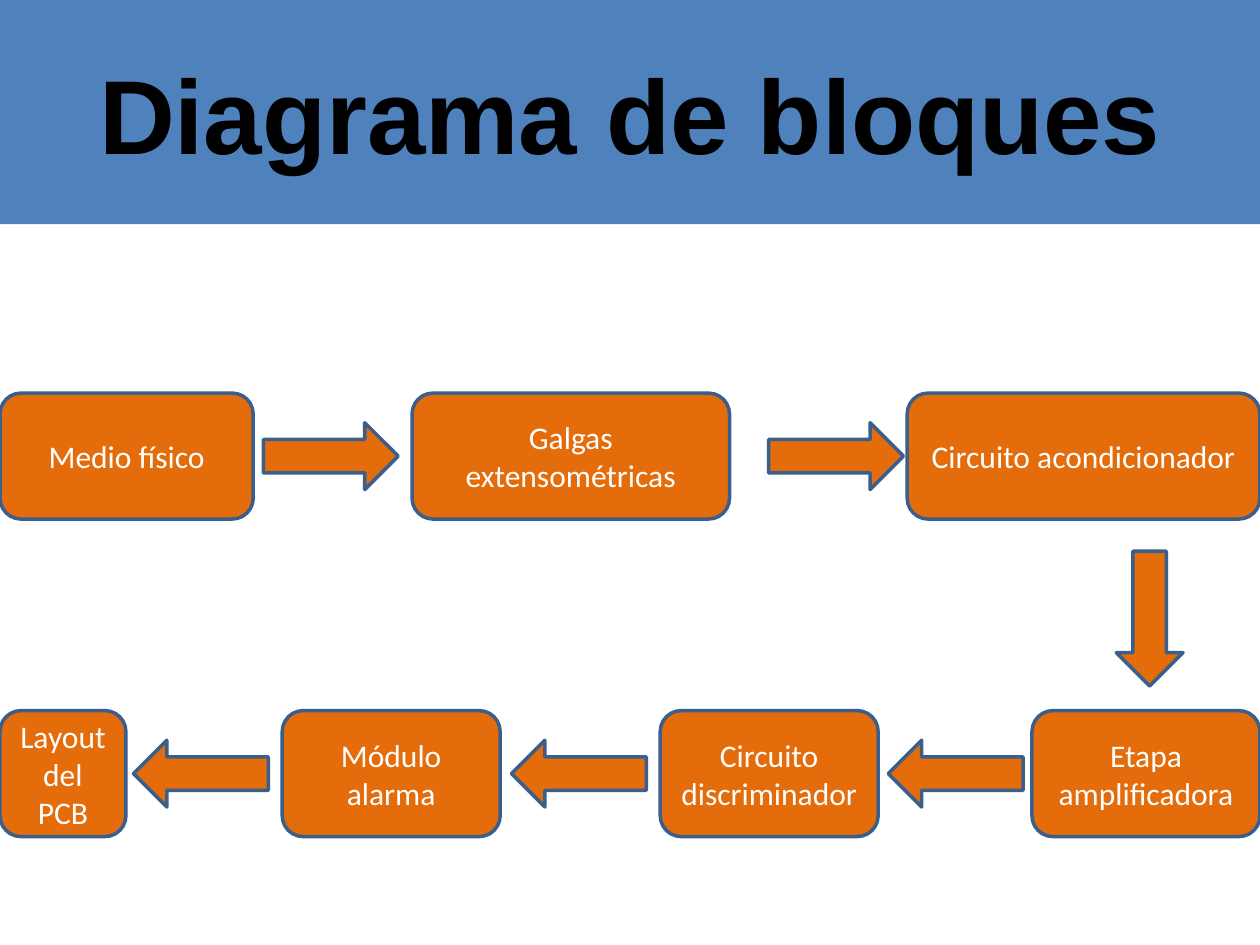
from pptx import Presentation
from pptx.dml.color import RGBColor
from pptx.enum.shapes import MSO_SHAPE
from pptx.enum.text import MSO_ANCHOR, MSO_AUTO_SIZE, PP_ALIGN
from pptx.util import Inches, Pt


def paint(item, color):
    """Set a solid colour on a fill."""
    item.solid()
    item.fore_color.rgb = RGBColor.from_string(color)


def block(kind, left, top, width, height):
    """Add an orange shape with a blue outline."""
    shape = slide.shapes.add_shape(
        kind, Inches(left), Inches(top), Inches(width), Inches(height))
    shape.shadow.inherit = False
    paint(shape.fill, "E46C0A")
    paint(shape.line.fill, "3A5F8C")
    shape.line.width = Pt(2)
    return shape


deck = Presentation()
deck.slide_width, deck.slide_height = Inches(10), Inches(7.5)
slide = deck.slides.add_slide(deck.slide_layouts[5])

title = slide.shapes.title
title.left, title.top = 0, 0
title.width, title.height = deck.slide_width, Inches(1.78)
paint(title.fill, "4F81BD")
frame = title.text_frame
frame.auto_size = MSO_AUTO_SIZE.NONE
frame.vertical_anchor = MSO_ANCHOR.MIDDLE
para = frame.paragraphs[0]
para.alignment = PP_ALIGN.CENTER
run = para.add_run()
run.text = "Diagrama de bloques"
run.font.name, run.font.size, run.font.bold = "Arial", Pt(60), True
paint(run.font.fill, "000000")

upper, lower, tall = 3.12, 5.64, 1
steps = [
    ("Medio físico", 0, upper, 2.01),
    ("Galgas extensométricas", 3.27, upper, 2.52),
    ("Circuito acondicionador", 7.2, upper, 2.8),
    ("Etapa amplificadora", 8.19, lower, 1.81),
    ("Circuito discriminador", 5.24, lower, 1.73),
    ("Módulo alarma", 2.24, lower, 1.73),
    ("Layout del PCB", 0, lower, 1),
]
for text, left, top, width in steps:
    box = block(MSO_SHAPE.ROUNDED_RECTANGLE, left, top, width, tall)
    frame = box.text_frame
    frame.word_wrap = True
    frame.vertical_anchor = MSO_ANCHOR.MIDDLE
    para = frame.paragraphs[0]
    para.alignment = PP_ALIGN.CENTER
    run = para.add_run()
    run.text = text
    run.font.name, run.font.size = "Calibri", Pt(18)
    paint(run.font.fill, "FFFFFF")

long, thick = 1.07, 0.53
inset = (tall - thick) / 2
arrows = [
    (2.09, upper + inset, 180),
    (6.1, upper + inset, 180),
    (8.59, (upper + tall + lower - thick) / 2 + 0.03, 270),
    (7.05, lower + inset, 0),
    (4.06, lower + inset, 0),
    (1.06, lower + inset, 0),
]
for left, top, turn in arrows:
    arrow = block(MSO_SHAPE.LEFT_ARROW, left, top, long, thick)
    arrow.rotation = turn

deck.save("out.pptx")
